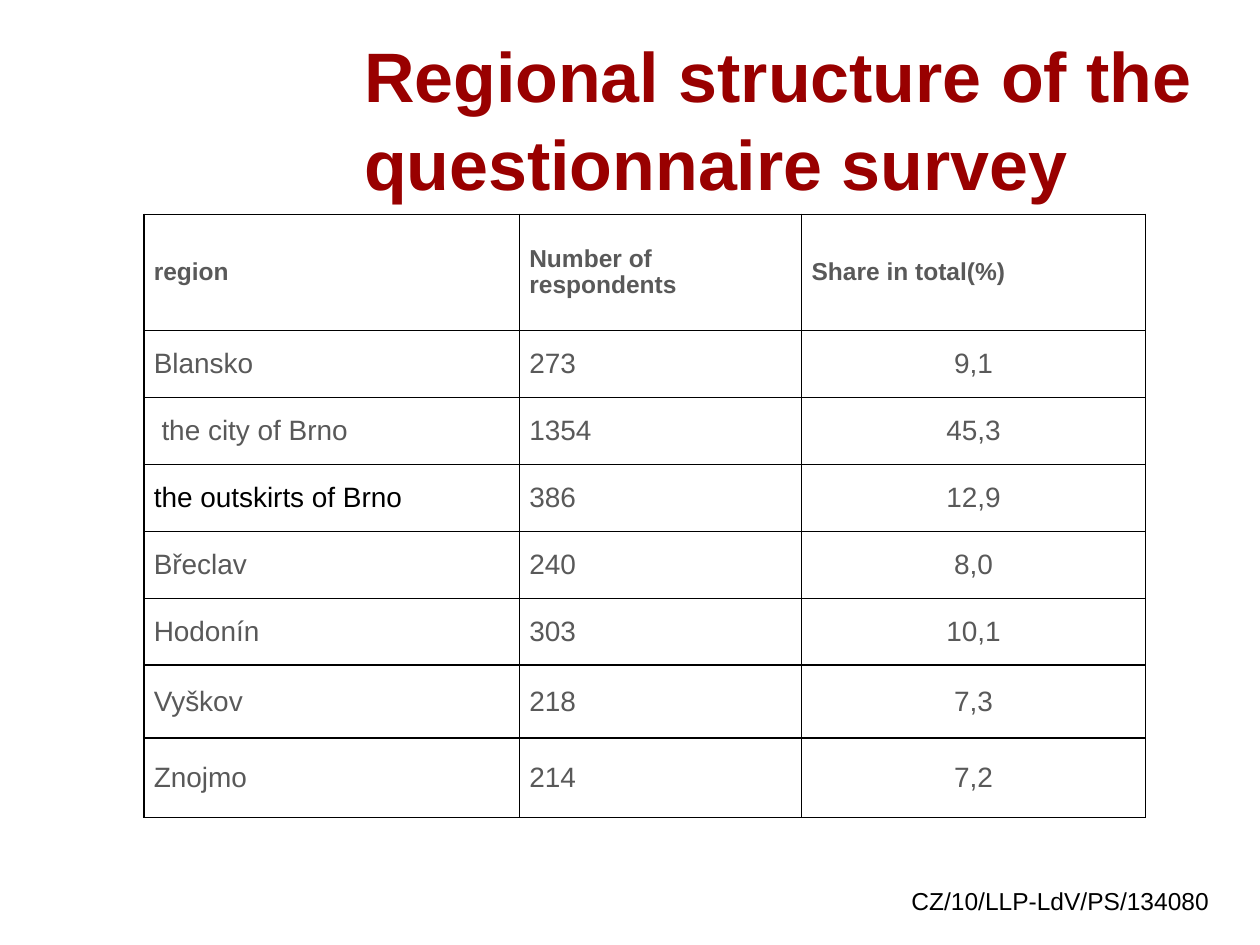
"""Build the slide on the regional structure of the questionnaire survey."""
from dataclasses import dataclass

from lxml import etree
from pptx import Presentation, util as u
from pptx.dml.color import RGBColor as Rgb
from pptx.enum import text as t
from pptx.oxml.ns import qn


@dataclass
class Theme:
    font: str = "Arial"
    red: str = "990000"
    gray: str = "595959"
    black: str = "000000"
    white: str = "FFFFFF"
    title: int = 40
    body: int = 16
    small: int = 14
    line: int = 1


theme = Theme()
Title = "Regional structure of the questionnaire survey"
Code = "CZ/10/LLP-LdV/PS/134080"
Head = ("region", "Number of respondents", "Share in total(%)")
Data = [
    ("Blansko", "273", "9,1"),
    (" the city of Brno", "1354", "45,3"),
    ("the outskirts of Brno", "386", "12,9"),
    ("Břeclav", "240", "8,0"),
    ("Hodonín", "303", "10,1"),
    ("Vyškov", "218", "7,3"),
    ("Znojmo", "214", "7,2"),
]
Dark = "the outskirts of Brno"
Widths = (7.57, 5.69, 6.93)
Heights = (2.34, *[1.35] * 5, 1.47, 1.6)


def style(frame, words, size, color, bold=False, center=False, space=None):
    frame.text = words
    frame.word_wrap = True
    para = frame.paragraphs[0]
    para.alignment = t.PP_ALIGN.CENTER if center else t.PP_ALIGN.LEFT
    para.line_spacing = space
    for run in para.runs:
        font = run.font
        font.name, font.size, font.bold = theme.font, u.Pt(size), bold
        font.color.rgb = Rgb.from_string(color)


def label(slide, place, words, *look, **more):
    box = slide.shapes.add_textbox(*map(u.Cm, place))
    style(box.text_frame, words, *look, **more)
    return box.text_frame


def border(cell):
    props = cell._tc.get_or_add_tcPr()
    for side in ("lnL", "lnR", "lnT", "lnB"):
        line = etree.SubElement(props, qn(f"a:{side}"), w=str(u.Pt(theme.line)))
        fill = etree.SubElement(line, qn("a:solidFill"))
        etree.SubElement(fill, qn("a:srgbClr"), val=theme.black)


def paint(cell, words, top, center):
    border(cell)
    cell.fill.solid()
    cell.fill.fore_color.rgb = Rgb.from_string(theme.white)
    cell.vertical_anchor = t.MSO_ANCHOR.MIDDLE
    cell.margin_left = cell.margin_right = u.Cm(0.2)
    cell.margin_top = cell.margin_bottom = u.Cm(0.1)
    color = theme.black if words == Dark else theme.gray
    size = theme.small if top else theme.body
    style(cell.text_frame, words, size, color, top, center, 0.95 if top else None)


def grid(slide):
    rows = [Head, *Data]
    place = (2.9, 4.32, sum(Widths), sum(Heights))
    table = slide.shapes.add_table(len(rows), len(Head), *map(u.Cm, place)).table
    table.first_row = table.horz_banding = False
    for col, width in zip(table.columns, Widths):
        col.width = u.Cm(width)
    for row, height in zip(table.rows, Heights):
        row.height = u.Cm(height)
    for r, row in enumerate(rows):
        for c, words in enumerate(row):
            paint(table.cell(r, c), words, r == 0, r > 0 and c == 2)


def main():
    deck = Presentation()
    deck.slide_width, deck.slide_height = u.Cm(25.4), u.Cm(19.05)
    slide = deck.slides.add_slide(deck.slide_layouts[6])
    title = label(slide, (7.09, 0.76, 17.63, 3.18), Title,
                  theme.title, theme.red, bold=True, space=1.05)
    title.vertical_anchor = t.MSO_ANCHOR.MIDDLE
    label(slide, (17.35, 17.73, 8.05, 1.32), Code,
          theme.small, theme.black, center=True)
    grid(slide)
    deck.save("out.pptx")


if __name__ == "__main__":
    main()
